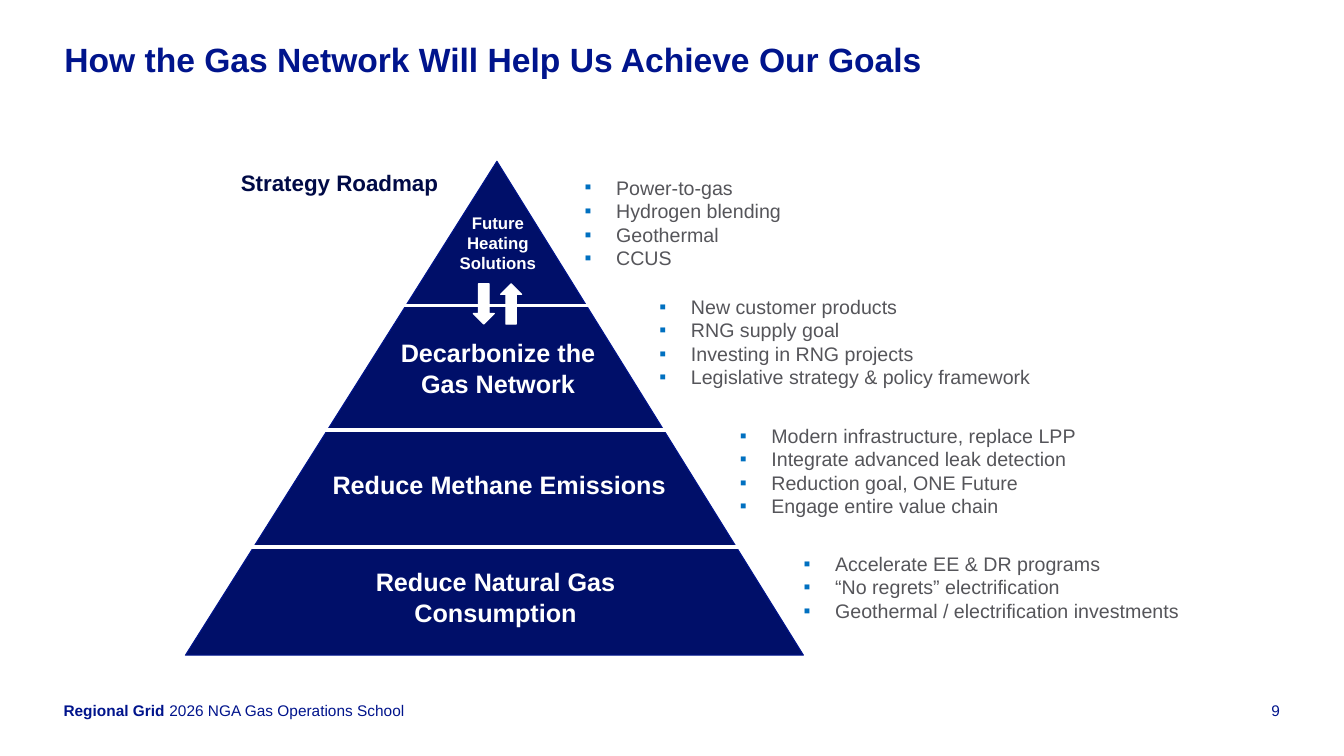
from dataclasses import dataclass

from lxml.etree import SubElement
from pptx import Presentation
from pptx.dml.color import RGBColor as RGB
from pptx.enum.shapes import MSO_CONNECTOR as LINE, MSO_SHAPE as SHAPE
from pptx.enum.text import MSO_ANCHOR as ANCHOR, MSO_AUTO_SIZE as FIT, PP_ALIGN as ALIGN
from pptx.oxml.ns import qn
from pptx.util import Pt


@dataclass(frozen=True)
class Theme:
    font: str = "Arial"
    blue: RGB = RGB(0x00, 0x14, 0x8C)
    navy: RGB = RGB(0x00, 0x0F, 0x69)
    ink: RGB = RGB(0x00, 0x0A, 0x46)
    grey: RGB = RGB(0x55, 0x55, 0x5A)
    white: RGB = RGB(0xFF, 0xFF, 0xFF)
    bullet: RGB = RGB(0x00, 0x70, 0xC0)
    title: int = 24
    tier: int = 18
    heading: int = 16
    body: int = 14
    small: int = 12
    footer: int = 11


T = Theme()

TITLE = ("How the Gas Network Will Help Us Achieve Our Goals", (46, 24.5, 661, 36))

LISTS = [
    ((417.6, 125.3, 141, 68),
     ["Power-to-gas", "Hydrogen blending", "Geothermal", "CCUS"]),
    ((471, 210.5, 272, 68),
     ["New customer products", "RNG supply goal", "Investing in RNG projects",
      "Legislative strategy & policy framework"]),
    ((528.5, 302.5, 272, 85),
     ["Modern infrastructure, replace LPP", "Integrate advanced leak detection",
      "Reduction goal, ONE Future", "Engage entire value chain"]),
    ((574, 394, 287, 51),
     ["Accelerate EE & DR programs", "“No regrets” electrification",
      "Geothermal / electrification investments"]),
]

TIERS = [
    ("Future Heating Solutions", T.small, (315.7, 152, 80, 45)),
    ("Decarbonize the Gas Network", T.tier, (275.8, 241.3, 160, 45)),
    ("Reduce Methane Emissions", T.tier, (165.6, 335, 382, 23)),
    ("Reduce Natural Gas Consumption", T.tier, (214, 404.8, 280, 45)),
]

LABELS = [
    ("Strategy Roadmap", T.heading, T.ink, True, ALIGN.LEFT, (172, 121, 240, 19.5)),
    ("Regional Grid", T.footer, T.blue, True, ALIGN.LEFT, (45.4, 500.6, 75, 13.5)),
    ("2026 NGA Gas Operations School", T.footer, T.blue, False, ALIGN.LEFT,
     (121, 500.6, 208, 13.5)),
    ("9", T.footer, T.blue, False, ALIGN.RIGHT, (858, 500.6, 56.2, 13.5)),
]

PYRAMID = (132.5, 115.2, 441.4, 352.8)
APEX = 0.504
CUTS = [218.2, 307.4, 391]
OVERHANG = 19
ARROWS = [(SHAPE.DOWN_ARROW, 338), (SHAPE.UP_ARROW, 357.5)]
ARROW_TOP, ARROW_W, ARROW_H = 202.7, 15.1, 28.8
INDENT = 22.5


def place(sp, box):
    sp.left, sp.top, sp.width, sp.height = map(Pt, box)


def write(sp, lines, size, color, bold=False, align=ALIGN.LEFT, anchor=ANCHOR.TOP, bullets=False):
    tf = sp.text_frame
    tf.word_wrap = True
    tf.auto_size = FIT.NONE
    tf.vertical_anchor = anchor
    tf.margin_left = tf.margin_top = tf.margin_right = tf.margin_bottom = 0
    for i, line in enumerate(lines):
        p = tf.add_paragraph() if i else tf.paragraphs[0]
        if bullets:
            add_bullet(p)
        p.alignment = align
        p.space_before = Pt(0)
        r = p.add_run()
        r.text = line
        r.font.name = T.font
        r.font.size = Pt(size)
        r.font.bold = bold
        r.font.color.rgb = color


def add_bullet(p):
    pr = p._p.get_or_add_pPr()
    pr.set("marL", str(Pt(INDENT)))
    pr.set("indent", str(-Pt(INDENT)))
    color = SubElement(pr, qn("a:buClr"))
    SubElement(color, qn("a:srgbClr")).set("val", str(T.bullet))
    SubElement(pr, qn("a:buChar")).set("char", "▪")


def add_label(s, text, size, color, bold, align, box):
    sp = s.shapes.add_textbox(*map(Pt, box))
    write(sp, [text], size, color, bold, align)


def add_shape(s, kind, box, fill, line):
    sp = s.shapes.add_shape(kind, *map(Pt, box))
    sp.shadow.inherit = False
    sp.fill.solid()
    sp.fill.fore_color.rgb = fill
    sp.line.color.rgb = line
    sp.line.width = Pt(0.75)
    return sp


def add_cut(s, y):
    left, top, width, height = PYRAMID
    depth = (y - top) / height
    apex = left + APEX * width
    x1 = apex - depth * APEX * width - OVERHANG
    x2 = apex + depth * (1 - APEX) * width + OVERHANG
    c = s.shapes.add_connector(LINE.STRAIGHT, Pt(x1), Pt(y), Pt(x2), Pt(y))
    c.line.color.rgb = T.white
    c.line.width = Pt(2.75)
    SubElement(c._element.spPr, qn("a:effectLst"))


def main():
    prs = Presentation()
    prs.slide_width, prs.slide_height = Pt(960), Pt(540)
    s = prs.slides.add_slide(prs.slide_layouts.get_by_name("Comparison"))

    text, box = TITLE
    place(s.shapes.title, box)
    write(s.shapes.title, [text], T.title, T.blue, True, anchor=ANCHOR.MIDDLE)

    bodies = [sp for sp in s.placeholders if sp.placeholder_format.idx in range(1, 5)]
    for sp, (box, lines) in zip(bodies, LISTS):
        place(sp, box)
        write(sp, lines, T.body, T.grey, bullets=True)

    pyramid = add_shape(s, SHAPE.ISOSCELES_TRIANGLE, PYRAMID, T.navy, T.blue)
    pyramid.adjustments[0] = APEX
    for text, size, box in TIERS:
        add_label(s, text, size, T.white, True, ALIGN.CENTER, box)
    for y in CUTS:
        add_cut(s, y)
    for kind, x in ARROWS:
        add_shape(s, kind, (x, ARROW_TOP, ARROW_W, ARROW_H), T.white, T.white)
    for label in LABELS:
        add_label(s, *label)

    prs.save("out.pptx")


if __name__ == "__main__":
    main()
